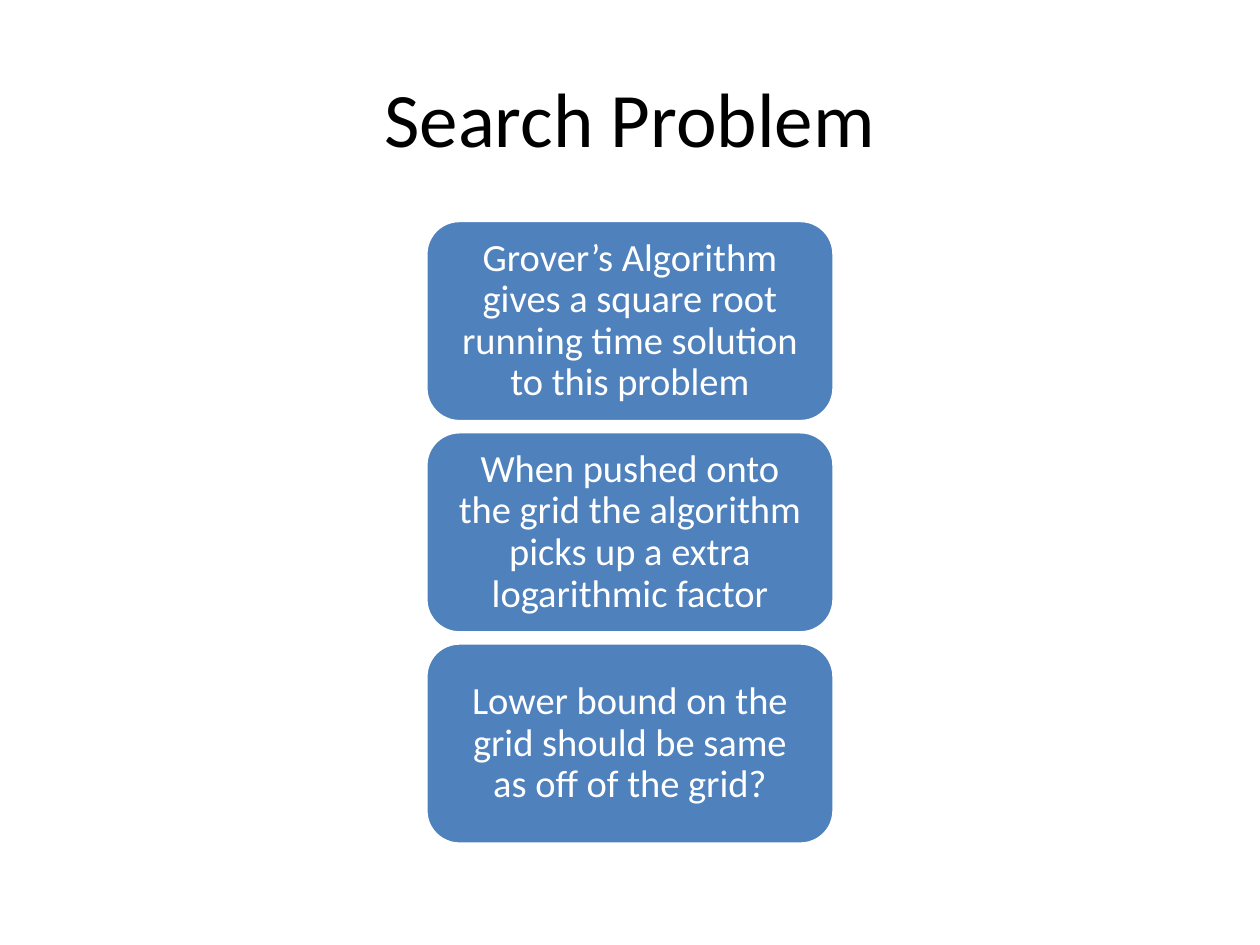
from pptx import Presentation
from pptx.dml.color import RGBColor
from pptx.enum import shapes, text
from pptx.util import Inches, Pt

BLACK = RGBColor(0x00, 0x00, 0x00)
WHITE = RGBColor(0xFF, 0xFF, 0xFF)
BLUE = RGBColor(0x4F, 0x81, 0xBD)

POINTS = [
    "Grover’s Algorithm gives a square root running time solution to this problem",
    "When pushed onto the grid the algorithm picks up a extra logarithmic factor",
    "Lower bound on the grid should be same as off of the grid?",
]


def write(frame, words, *, size, color, line_spacing=1.0, margins=(0.1, 0.05)):
    frame.word_wrap = True
    frame.auto_size = text.MSO_AUTO_SIZE.NONE
    frame.vertical_anchor = text.MSO_ANCHOR.MIDDLE
    frame.margin_left = frame.margin_right = Inches(margins[0])
    frame.margin_top = frame.margin_bottom = Inches(margins[1])
    paragraph = frame.paragraphs[0]
    paragraph.alignment = text.PP_ALIGN.CENTER
    paragraph.line_spacing = line_spacing
    run = paragraph.add_run()
    run.text = words
    run.font.name = "Calibri"
    run.font.size = Pt(size)
    run.font.color.rgb = color


def place_heading(slide, words, left, top, width, height):
    heading = slide.shapes.title
    heading.left, heading.top = Inches(left), Inches(top)
    heading.width, heading.height = Inches(width), Inches(height)
    write(heading.text_frame, words, size=44, color=BLACK)


def place_points(slide, points, left, top, width, height, gap=0.08):
    card_height = (height - gap * (len(points) - 1)) / len(points)
    for index, point in enumerate(points):
        card = slide.shapes.add_shape(
            shapes.MSO_SHAPE.ROUNDED_RECTANGLE,
            Inches(left), Inches(top + index * (card_height + gap)),
            Inches(width), Inches(card_height))
        card.shadow.inherit = False
        card.fill.solid()
        card.fill.fore_color.rgb = BLUE
        card.line.color.rgb = WHITE
        card.line.width = Pt(2)
        write(card.text_frame, point, size=22, color=WHITE,
              line_spacing=0.9, margins=(0.17, 0.13))


def main():
    deck = Presentation()
    deck.slide_width, deck.slide_height = Inches(10), Inches(7.5)
    slide = deck.slides.add_slide(deck.slide_layouts[5])
    place_heading(slide, "Search Problem", 0.5, 0.3, 9, 1.25)
    place_points(slide, POINTS, 3.38, 1.75, 3.24, 4.95)
    deck.save("out.pptx")


if __name__ == "__main__":
    main()
